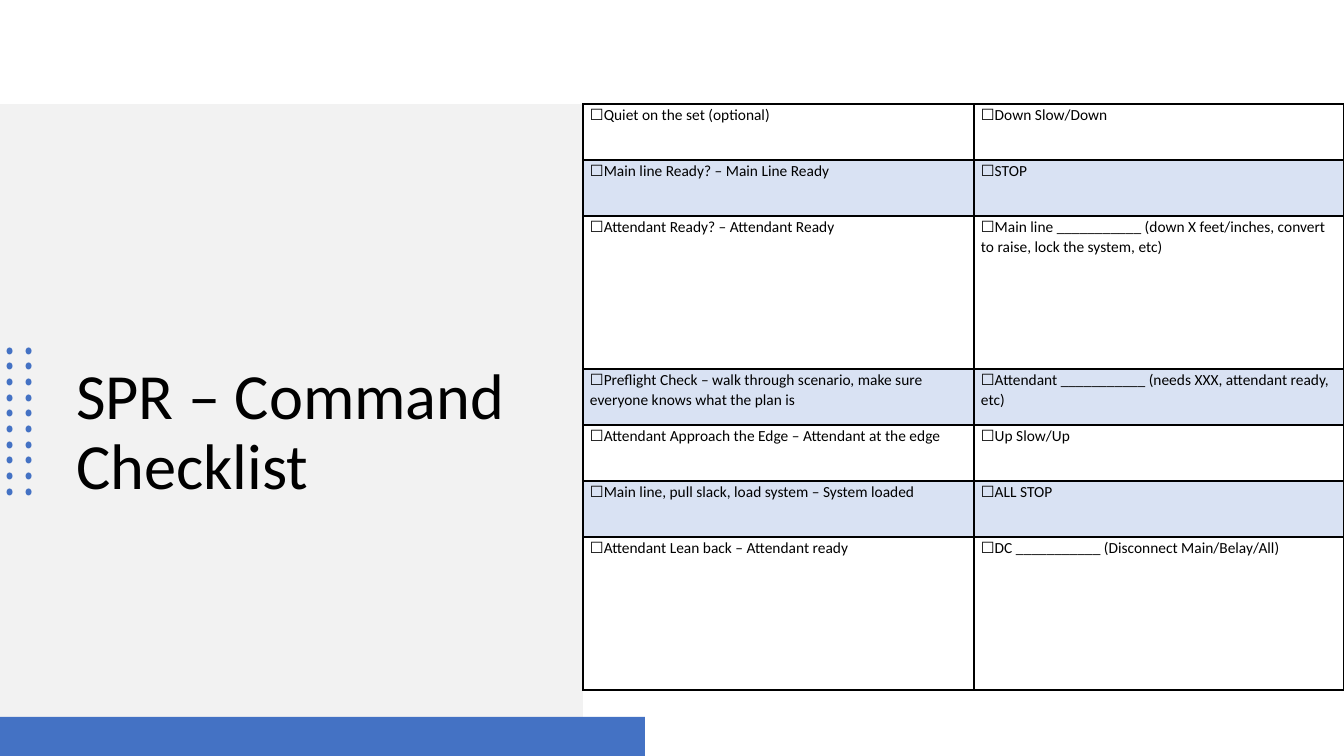
"""Build the SPR command checklist slide."""
import pptx
import pptx.util
import pptx.dml.color
import pptx.enum.shapes
import pptx.enum.text
import pptx.oxml

HUES = {"panel": "F2F2F2", "blue": "4472C4", "ink": "000000"}
FONT = "Calibri"
KIND = pptx.enum.shapes.MSO_SHAPE
ROWS = [
    (56, "☐Quiet on the set (optional)", "☐Down Slow/Down"),
    (56, "☐Main line Ready? – Main Line Ready", "☐STOP"),
    (153, "☐Attendant Ready? – Attendant Ready",
     "☐Main line ___________ (down X feet/inches, convert to raise, lock the system, etc)"),
    (56, "☐Preflight Check – walk through scenario, make sure everyone knows what the plan is",
     "☐Attendant ___________ (needs XXX, attendant ready, etc)"),
    (56, "☐Attendant Approach the Edge – Attendant at the edge", "☐Up Slow/Up"),
    (56, "☐Main line, pull slack, load system – System loaded", "☐ALL STOP"),
    (153, "☐Attendant Lean back – Attendant ready", "☐DC ___________ (Disconnect Main/Belay/All)"),
]
COLS = [391, 370]


def px(*nums):
    sizes = [pptx.util.Emu(round(n * 12192000 / 1344)) for n in nums]
    return sizes if len(sizes) > 1 else sizes[0]


def add_block(shapes, kind, hue, *box):
    block = shapes.add_shape(kind, *px(*box))
    block.shadow.inherit = False
    block.fill.solid()
    block.fill.fore_color.rgb = pptx.dml.color.RGBColor.from_string(HUES[hue])
    block.line.fill.background()
    return block


deck = pptx.Presentation()
deck.slide_width, deck.slide_height = px(1344, 756)
slide = deck.slides.add_slide(deck.slide_layouts[5])
ink = pptx.dml.color.RGBColor.from_string(HUES["ink"])

title = slide.shapes.title
title.left, title.top, title.width, title.height = px(66, 216, 468, 292)
frame = title.text_frame
frame.text = "SPR – Command Checklist"
frame.word_wrap = True
frame.auto_size = pptx.enum.text.MSO_AUTO_SIZE.NONE
frame.vertical_anchor = pptx.enum.text.MSO_ANCHOR.BOTTOM
head = frame.paragraphs[0]
head.alignment = pptx.enum.text.PP_ALIGN.LEFT
head.line_spacing = 0.9
font = head.runs[0].font
font.name, font.size, font.color.rgb = FONT, pptx.util.Pt(46), ink

panel = add_block(slide.shapes, KIND.RECTANGLE, "panel", 0, 104, 583, 652)
title.element.addprevious(panel.element)

dots = slide.shapes.add_group_shape()
for row in range(10):
    for left in (6, 25):
        dot = add_block(dots.shapes, KIND.OVAL, "blue", left, 348 + row * 141 // 9, 7, 6)
        dot.rotation = 90

add_block(slide.shapes, KIND.RECTANGLE, "blue", 0, 717, 645, 39)

tall = sum(row[0] for row in ROWS)
table = slide.shapes.add_table(len(ROWS), 2, *px(583, 104, sum(COLS), tall)).table
table.first_row = table.horz_banding = False
for col, width in zip(table.columns, COLS):
    col.width = px(width)
for r, (height, *texts) in enumerate(ROWS):
    table.rows[r].height = px(height)
    for c, text in enumerate(texts):
        cell = table.cell(r, c)
        cell.margin_left = cell.margin_right = px(7)
        cell.margin_top = cell.margin_bottom = 0
        cell.text_frame.text = text
        para = cell.text_frame.paragraphs[0]
        para.line_spacing = 1.07
        font = para.runs[0].font
        font.name, font.size, font.color.rgb = FONT, pptx.util.Pt(11), ink
        props = cell._tc.get_or_add_tcPr()
        for side in "LRTB":
            props.append(pptx.oxml.parse_xml(
                f'<a:ln{side} xmlns:a="http://schemas.openxmlformats.org/drawingml/2006/main" w="12700">'
                f'<a:solidFill><a:srgbClr val="{HUES["ink"]}"/></a:solidFill></a:ln{side}>'))
        if r % 2:
            cell.fill.solid()
            cell.fill.fore_color.rgb = pptx.dml.color.RGBColor.from_string(HUES["blue"])
            tint = props.find("{*}solidFill/{*}srgbClr")
            tint.append(pptx.oxml.parse_xml(
                '<a:alpha xmlns:a="http://schemas.openxmlformats.org/drawingml/2006/main" val="20000"/>'))
        else:
            cell.fill.background()

deck.save("out.pptx")
